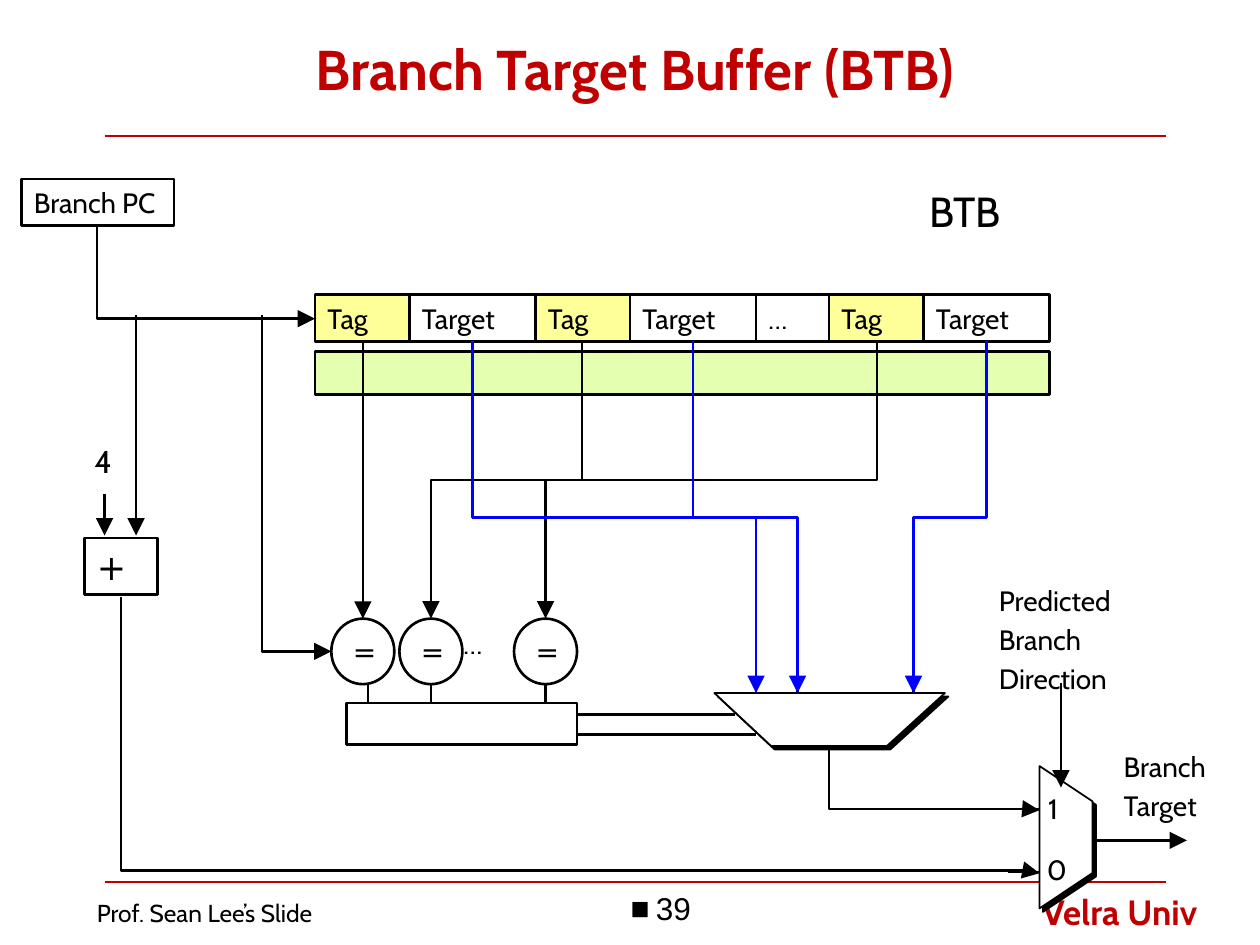
from lxml import etree
from pptx import Presentation
from pptx.dml.color import RGBColor
from pptx.enum.shapes import MSO_CONNECTOR, MSO_SHAPE
from pptx.enum.text import MSO_ANCHOR, PP_ALIGN
from pptx.oxml.ns import qn
from pptx.util import Inches, Pt

STRAIGHT, ELBOW = MSO_CONNECTOR.STRAIGHT, MSO_CONNECTOR.ELBOW
RECTANGLE, OVAL = MSO_SHAPE.RECTANGLE, MSO_SHAPE.OVAL
TOP, MIDDLE = MSO_ANCHOR.TOP, MSO_ANCHOR.MIDDLE
LEFT, CENTER = PP_ALIGN.LEFT, PP_ALIGN.CENTER

COLORS = {"red": "C00000", "black": "000000", "white": "FFFFFF",
          "yellow": "FFFF99", "green": "CCFF66", "blue": "0000FF"}

TITLE = "Branch Target Buffer (BTB)"
SCHOOL = "Velra Univ"
RULES = [1.08, 7]
BTB_LEFT, BTB_TOP, BTB_HEIGHT = 2.5, 2.34, 0.37
BTB_FIELDS = [("Tag", 0.75, "yellow"), ("Target", 1, "white"),
              ("Tag", 0.75, "yellow"), ("Target", 1, "white"),
              ("…", 0.58, "white"),
              ("Tag", 0.75, "yellow"), ("Target", 1, "white")]
COMPARATORS = [2.88, 3.42, 4.33]
WAY_INPUTS = [6, 6.33, 7.25]
RESULT_INPUTS = [6.42, 6.92]
WAY_MUX = [(5.67, 5.5), (6.12, 5.92), (7.04, 5.92), (7.5, 5.5)]
RESULT_MUX = [(8.25, 7.21), (8.67, 6.93), (8.67, 6.36), (8.25, 6.08)]

LABELS = [
    (["BTB"], 7.28, 1.42, 0.78, 0.51, 24, TOP),
    (["…"], 3.58, 4.92, 0.58, 0.37, 16, MIDDLE),
    (["4"], 0.65, 3.46, 0.34, 0.4, 18, TOP),
    (["Branch", "Target"], 8.82, 5.9, 0.88, 0.69, 16, TOP),
    (["Predicted", "Branch", "Direction"], 7.83, 4.58, 1.12, 1.02, 16, TOP),
    (["0"], 8.21, 6.72, 0.32, 0.37, 16, TOP),
    (["1"], 8.22, 6.23, 0.27, 0.37, 16, TOP),
    (["Prof. Sean Lee’s Slide"], 0.67, 7.08, 2.04, 0.34, 14, TOP),
]
ARROWS = [(2.88, 2.71, 2.88, 4.91), (0.83, 3.92, 0.83, 4.25),
          (1.08, 2.5, 1.08, 4.25), (8.67, 6.67, 9.42, 6.67),
          (8.42, 5.42, 8.42, 6.25)]
HIT_LINES = [(4.58, 5.67, 5.83, 5.67), (4.58, 5.83, 6, 5.83)]
CORNER_WIRES = [(0.77, 1.79, 2.5, 2.53), (2.08, 2.5, 2.63, 5.17)]
STEP_WIRES = [
    (4.62, 2.71, 3.42, 4.91, "black", 0.5),
    (6.96, 2.71, 4.33, 4.91, "black", 0.5),
    (3.75, 2.71, 6, 5.5, "blue", 0.5),
    (5.5, 2.71, 6.33, 5.5, "blue", 0.5),
    (7.83, 2.71, 7.25, 5.5, "blue", 0.5),
    (6.58, 5.92, 8.25, 6.43, "black", 0.98),
    (0.96, 4.74, 8.25, 6.93, "black", 0.99),
]


def rgb(name):
    return RGBColor.from_string(COLORS[name])


def write(shape, lines, size, color="black", font="Cabin", bold=False,
          anchor=TOP, align=LEFT, spacing=0.2, wrap=False):
    frame = shape.text_frame
    frame.word_wrap = wrap
    frame.vertical_anchor = anchor
    for index, line in enumerate(lines):
        paragraph = frame.add_paragraph() if index else frame.paragraphs[0]
        paragraph.alignment = align
        paragraph.space_before = Pt(size * spacing)
        run = paragraph.add_run()
        run.text = line
        run.font.size = Pt(size)
        run.font.name = font
        run.font.bold = bold
        run.font.color.rgb = rgb(color)


def style(shape, fill="white", width=1.5):
    shape.shadow.inherit = False
    shape.fill.solid()
    shape.fill.fore_color.rgb = rgb(fill)
    shape.line.color.rgb = rgb("black")
    shape.line.width = Pt(width)


def add_box(slide, left, top, width, height, fill="white", kind=RECTANGLE):
    shape = slide.shapes.add_shape(
        kind, Inches(left), Inches(top), Inches(width), Inches(height))
    style(shape, fill)
    return shape


def add_label(slide, lines, left, top, width, height, size, anchor=TOP, **options):
    box = slide.shapes.add_textbox(
        Inches(left), Inches(top), Inches(width), Inches(height))
    write(box, lines, size, anchor=anchor, **options)
    return box


def add_line(slide, x1, y1, x2, y2, color="black", arrow=False, kind=STRAIGHT):
    connector = slide.shapes.add_connector(
        kind, Inches(x1), Inches(y1), Inches(x2), Inches(y2))
    connector.line.color.rgb = rgb(color)
    connector.line.width = Pt(1.5)
    properties = connector._element.spPr
    if arrow:
        etree.SubElement(properties.find(qn("a:ln")), qn("a:tailEnd"),
                         type="triangle", w="lg", len="lg")
    etree.SubElement(properties, qn("a:effectLst"))
    return connector


def add_wire(slide, x1, y1, x2, y2, color="black", bend=None):
    middle_x, middle_y = (x1 + x2) / 2, (y1 + y2) / 2
    half_length = (y2 - y1) / 2
    half_drop = abs(x2 - x1) / 2
    rightward = x2 > x1
    reach = -half_length if rightward else half_length
    connector = add_line(slide, middle_x - reach, middle_y - half_drop,
                         middle_x + reach, middle_y + half_drop,
                         color, True, ELBOW)
    properties = connector._element.spPr
    properties.find(qn("a:xfrm")).set("rot", str((270 if rightward else 90) * 60000))
    geometry = properties.find(qn("a:prstGeom"))
    if bend is None:
        geometry.set("prst", "bentConnector2")
    else:
        etree.SubElement(geometry.find(qn("a:avLst")), qn("a:gd"),
                         name="adj1", fmla=f"val {round(bend * 100000)}")


def add_mux(slide, points):
    corners = [(Inches(x), Inches(y)) for x, y in points]
    builder = slide.shapes.build_freeform(*corners[0])
    builder.add_line_segments(corners[1:], close=True)
    mux = builder.convert_to_shape()
    style(mux, width=1)
    effects = mux._element.spPr.find(qn("a:effectLst"))
    shadow = etree.SubElement(effects, qn("a:outerShdw"), dist=str(Pt(2.8)),
                              dir=str(45 * 60000), algn="ctr", rotWithShape="0")
    etree.SubElement(shadow, qn("a:srgbClr"), val=COLORS["black"])


def add_page_number(slide):
    box = add_label(slide, ["39"], 3.66, 7.01, 3.17, 0.5, 18, font="Arial",
                    align=CENTER, spacing=0, wrap=True)
    properties = box.text_frame.paragraphs[0]._p.get_or_add_pPr()
    properties.set("marL", str(Inches(0.2)))
    properties.set("indent", str(Inches(-0.2)))
    etree.SubElement(properties, qn("a:buFont"), typeface="Arial")
    etree.SubElement(properties, qn("a:buChar"), char="■")


def main():
    presentation = Presentation()
    presentation.slide_width, presentation.slide_height = Inches(10), Inches(7.5)
    slide = presentation.slides.add_slide(presentation.slide_layouts[5])

    title = slide.shapes.title
    title.left, title.top = Inches(0.83), Inches(0.08)
    title.width, title.height = Inches(8.42), Inches(0.92)
    write(title, [TITLE], 32, "red", bold=True, anchor=MIDDLE, align=CENTER,
          spacing=0, wrap=True)
    for y in RULES:
        add_line(slide, 0.83, y, 9.25, y, "red")
    add_label(slide, [SCHOOL], 8.17, 7.02, 1.74, 0.44, 20,
              color="red", bold=True)
    add_page_number(slide)

    entry = add_box(slide, BTB_LEFT, 2.79, 5.83, 0.34, "green")
    entry_color = entry._element.spPr.find(qn("a:solidFill"))[0]
    etree.SubElement(entry_color, qn("a:alpha"), val="52000")
    left = BTB_LEFT
    for name, width, fill in BTB_FIELDS:
        field = add_box(slide, left, BTB_TOP, width, BTB_HEIGHT, fill)
        write(field, [name], 16, anchor=MIDDLE, wrap=True)
        left += width

    write(add_box(slide, 0.17, 1.42, 1.21, 0.37), ["Branch PC"], 16)
    adder = add_box(slide, 0.67, 4.27, 0.58, 0.45)
    write(adder, ["+"], 20, font="DejaVu Sans", anchor=MIDDLE, wrap=True)
    add_box(slide, 2.75, 5.58, 1.83, 0.33)
    for x in COMPARATORS:
        comparator = add_box(slide, x - 0.25, 4.91, 0.5, 0.52, kind=OVAL)
        write(comparator, ["="], 16, font="DejaVu Sans", anchor=MIDDLE, wrap=True)
    for points in (WAY_MUX, RESULT_MUX):
        add_mux(slide, points)

    for x in [2.92] + COMPARATORS[1:]:
        add_line(slide, x, 5.42, x, 5.58)
    for x in WAY_INPUTS:
        add_line(slide, x, 5.25, x, 5.5)
    for y in RESULT_INPUTS:
        add_line(slide, 8, y, 8.25, y)
    for ends in HIT_LINES:
        add_line(slide, *ends)
    for ends in ARROWS:
        add_line(slide, *ends, arrow=True)
    for wire in CORNER_WIRES + STEP_WIRES:
        add_wire(slide, *wire)
    for label in LABELS:
        add_label(slide, *label)

    presentation.save("out.pptx")


if __name__ == "__main__":
    main()
